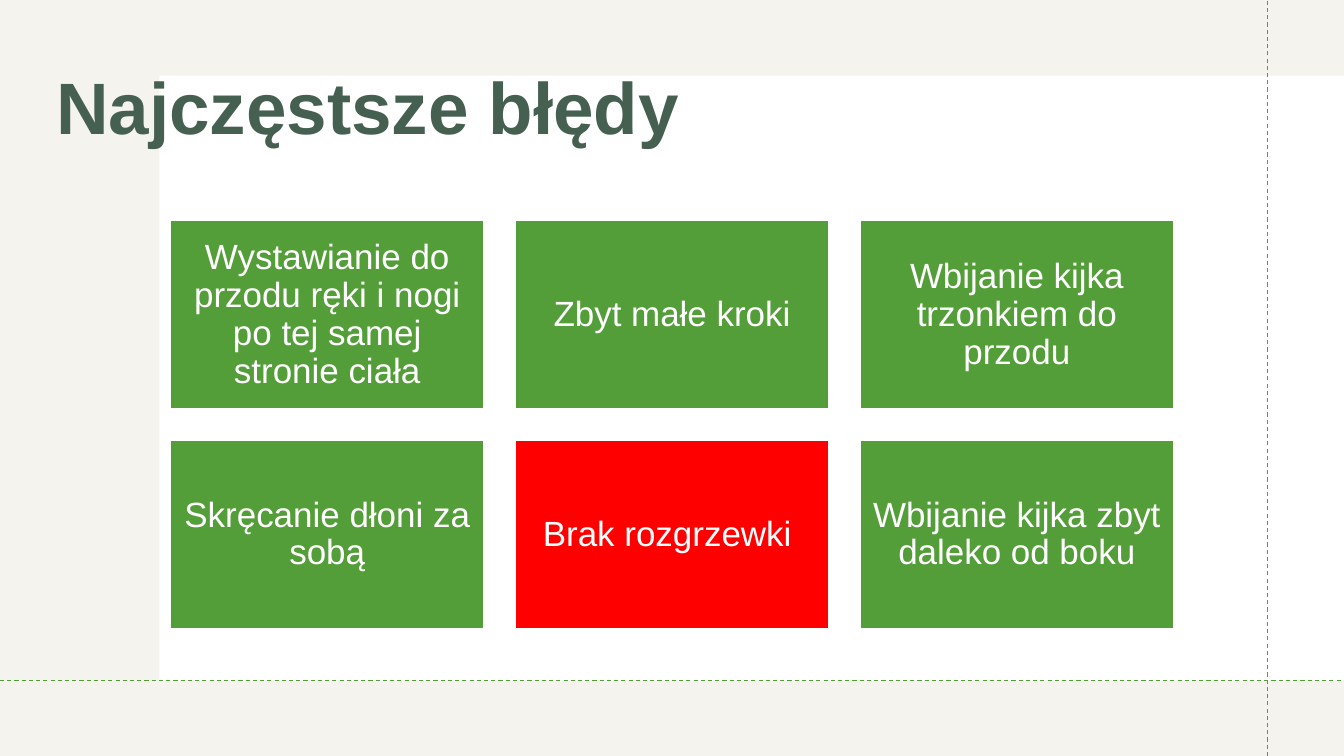
from dataclasses import dataclass

from lxml import etree
from pptx import Presentation
from pptx.dml.color import RGBColor
from pptx.enum.dml import MSO_LINE
from pptx.enum.shapes import MSO_CONNECTOR, MSO_SHAPE
from pptx.enum.text import MSO_ANCHOR, PP_ALIGN
from pptx.oxml.ns import qn
from pptx.shapes.autoshape import Shape
from pptx.slide import Slide
from pptx.util import Inches, Pt

DASH = MSO_LINE.DASH
STRAIGHT = MSO_CONNECTOR.STRAIGHT
RECTANGLE = MSO_SHAPE.RECTANGLE
TOP, MIDDLE = MSO_ANCHOR.TOP, MSO_ANCHOR.MIDDLE
LEFT, CENTER = PP_ALIGN.LEFT, PP_ALIGN.CENTER

FONT = "Arial"
GREEN, RED, WHITE = "549E39", "FF0000", "FFFFFF"
DARK_GREEN, SAND = "455F51", "E3DED1"

PAGE_WIDTH, PAGE_HEIGHT = 13.33, 7.5
PANEL_LEFT, PANEL_TOP, PANEL_HEIGHT = 1.58, 0.75, 6
RULE_X, RULE_Y = 12.57, PANEL_TOP + PANEL_HEIGHT

COLUMNS = 3
GRID_LEFT, GRID_TOP = 1.69, 2.19
CARD_WIDTH, CARD_HEIGHT, GAP = 3.11, 1.87, 0.31


@dataclass(frozen=True)
class Area:
    left: float
    top: float
    width: float
    height: float

    def lengths(self) -> tuple[int, ...]:
        return tuple(Inches(n) for n in (self.left, self.top, self.width, self.height))


@dataclass(frozen=True)
class Mistake:
    text: str
    color: str = GREEN


@dataclass(frozen=True)
class Rule:
    start: tuple[float, float]
    end: tuple[float, float]


MISTAKES = (
    Mistake("Wystawianie do przodu ręki i nogi po tej samej stronie ciała"),
    Mistake("Zbyt małe kroki"),
    Mistake("Wbijanie kijka trzonkiem do przodu"),
    Mistake("Skręcanie dłoni za sobą"),
    Mistake("Brak rozgrzewki ", RED),
    Mistake("Wbijanie kijka zbyt daleko od boku"),
)

RULES = (
    Rule((RULE_X, PAGE_HEIGHT), (RULE_X, 0)),
    Rule((0, RULE_Y), (PAGE_WIDTH, RULE_Y)),
)


def rgb(color: str) -> RGBColor:
    return RGBColor.from_string(color)


def add_rectangle(page: Slide, area: Area, color: str) -> Shape:
    box = page.shapes.add_shape(RECTANGLE, *area.lengths())
    box.shadow.inherit = False
    box.fill.solid()
    box.fill.fore_color.rgb = rgb(color)
    box.line.fill.background()
    return box


def set_opacity(box: Shape, percent: int) -> None:
    color = box.fill._xPr.find(f"{qn('a:solidFill')}/{qn('a:srgbClr')}")
    etree.SubElement(color, qn("a:alpha"), val=str(percent * 1000))


def write_text(box: Shape, text: str, size: float, color: str,
               align: PP_ALIGN, anchor: MSO_ANCHOR, bold: bool = False) -> None:
    frame = box.text_frame
    frame.word_wrap = True
    frame.vertical_anchor = anchor
    para = frame.paragraphs[0]
    para.text = text
    para.alignment = align
    para.line_spacing = 0.9
    para.font.name = FONT
    para.font.size = Pt(size)
    para.font.bold = bold
    para.font.color.rgb = rgb(color)


def add_background(page: Slide) -> None:
    tint = add_rectangle(page, Area(0, 0, PAGE_WIDTH, PAGE_HEIGHT), SAND)
    set_opacity(tint, 35)
    panel = Area(PANEL_LEFT, PANEL_TOP, PAGE_WIDTH - PANEL_LEFT, PANEL_HEIGHT)
    add_rectangle(page, panel, WHITE)


def add_title(page: Slide, text: str) -> None:
    box = page.shapes.add_textbox(*Area(0.46, 0.66, 11.87, 1.9).lengths())
    write_text(box, text, 52, DARK_GREEN, LEFT, TOP, bold=True)


def add_rule(page: Slide, rule: Rule) -> None:
    ends = (Inches(n) for n in rule.start + rule.end)
    line = page.shapes.add_connector(STRAIGHT, *ends)
    line.line.color.rgb = rgb(GREEN)
    line.line.width = Pt(0.75)
    line.line.dash_style = DASH
    etree.SubElement(line._element.spPr, qn("a:effectLst"))


def add_card(page: Slide, index: int, mistake: Mistake) -> None:
    row, column = divmod(index, COLUMNS)
    area = Area(GRID_LEFT + column * (CARD_WIDTH + GAP),
                GRID_TOP + row * (CARD_HEIGHT + GAP), CARD_WIDTH, CARD_HEIGHT)
    box = add_rectangle(page, area, mistake.color)
    box.line.color.rgb = rgb(WHITE)
    box.line.width = Pt(1)
    frame = box.text_frame
    frame.margin_left = frame.margin_right = Inches(0.1)
    frame.margin_top = frame.margin_bottom = Inches(0.1)
    write_text(box, mistake.text, 25, WHITE, CENTER, MIDDLE)


def main() -> None:
    deck = Presentation()
    deck.slide_width, deck.slide_height = Inches(PAGE_WIDTH), Inches(PAGE_HEIGHT)
    page = deck.slides.add_slide(deck.slide_layouts[6])
    add_background(page)
    add_title(page, "Najczęstsze błędy")
    for rule in RULES:
        add_rule(page, rule)
    for index, mistake in enumerate(MISTAKES):
        add_card(page, index, mistake)
    deck.save("out.pptx")


if __name__ == "__main__":
    main()
